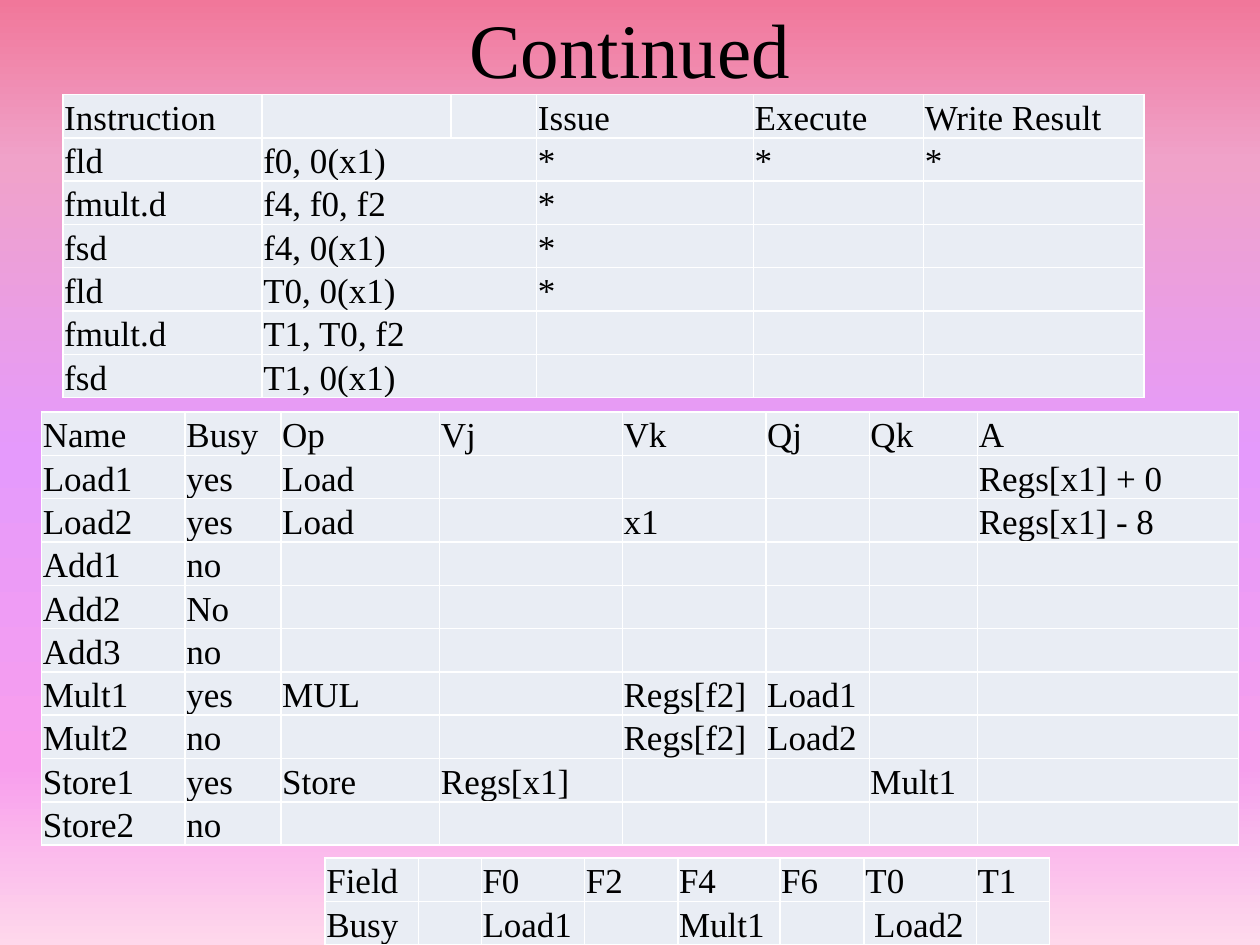
import dataclasses
import typing

import lxml.etree as etree
import pptx
import pptx.dml.color
import pptx.enum.text
import pptx.oxml.ns
import pptx.util

Inches = pptx.util.Inches
qn = pptx.oxml.ns.qn


@dataclasses.dataclass(frozen=True)
class Theme:
    font: str = "Times New Roman"
    ink: str = "000000"
    cell: str = "E9EDF4"
    rule: str = "FFFFFF"
    title: int = 44
    body: int = 20
    line: int = 1
    # Background stops: percent from the top, colour
    stops: tuple = ((0, "F1779A"), (17, "F0A2C9"), (48, "E59AFC"),
                    (81, "F89EED"), (100, "FED8EB"))


@dataclasses.dataclass(frozen=True)
class Grid:
    left: float
    top: float
    cols: tuple
    rows: tuple  # one string a row, cells parted by "|"
    merges: tuple = ()  # (row, first column, last column)


THEME = Theme()
MIN_ROW = 0.1  # rows grow to fit their text
ROW = 0.344  # share of the frame height for each row

STATUS = Grid(
    0.5, 0.75, (1.58, 1.5, 0.68, 1.72, 1.35, 1.75),
    ("Instruction|||Issue|Execute|Write Result",
     "fld|f0, 0(x1)||*|*|*",
     "fmult.d|f4, f0, f2||*||",
     "fsd|f4, 0(x1)||*||",
     "fld|T0, 0(x1)||*||",
     "fmult.d|T1, T0, f2||||",
     "fsd|T1, 0(x1)||||"),
    tuple((row, 1, 2) for row in range(1, 7)))

STATIONS = Grid(
    0.33, 3.27, (1.14, 0.76, 1.26, 1.45, 1.14, 0.82, 0.86, 2.07),
    ("Name|Busy|Op|Vj|Vk|Qj|Qk|A",
     "Load1|yes|Load|||||Regs[x1] + 0",
     "Load2|yes|Load||x1|||Regs[x1] - 8",
     "Add1|no||||||",
     "Add2|No||||||",
     "Add3|no||||||",
     "Mult1|yes|MUL||Regs[f2]|Load1||",
     "Mult2|no|||Regs[f2]|Load2||",
     "Store1|yes|Store|Regs[x1]|||Mult1|",
     "Store2|no||||||"))

FIELDS = Grid(
    2.58, 6.81, (0.74, 0.5, 0.82, 0.74, 0.81, 0.67, 0.89, 0.58),
    ("Field||F0|F2|F4|F6|T0|T1",
     "Busy||Load1||Mult1|| Load2|"))


def color(code: str) -> pptx.dml.color.RGBColor:
    return pptx.dml.color.RGBColor.from_string(code)


def write(frame: typing.Any, text: str, *, size: int = THEME.body,
          align: typing.Any = None) -> None:
    para = frame.paragraphs[0]
    para.alignment = align
    run = para.add_run()
    run.text = text
    run.font.name = THEME.font
    run.font.size = pptx.util.Pt(size)
    run.font.color.rgb = color(THEME.ink)


def paint(slide: typing.Any) -> None:
    """Fill the background with the vertical gradient."""
    fill = slide.background.fill
    fill.gradient()
    fill.gradient_angle = 270
    stops = slide.element.find(".//" + qn("a:gsLst"))
    for old in list(stops):
        stops.remove(old)
    for place, code in THEME.stops:
        stop = etree.SubElement(stops, qn("a:gs"), pos=str(place * 1000))
        etree.SubElement(stop, qn("a:srgbClr"), val=code)


def border(cell: typing.Any) -> None:
    props = cell._tc.get_or_add_tcPr()
    for side in ("a:lnL", "a:lnR", "a:lnT", "a:lnB"):
        line = etree.SubElement(props, qn(side),
                                w=str(pptx.util.Pt(THEME.line)))
        fill = etree.SubElement(line, qn("a:solidFill"))
        etree.SubElement(fill, qn("a:srgbClr"), val=THEME.rule)


def style(cell: typing.Any, text: str) -> None:
    border(cell)
    cell.fill.solid()
    cell.fill.fore_color.rgb = color(THEME.cell)
    cell.margin_left = cell.margin_right = cell.margin_top = Inches(0.01)
    cell.margin_bottom = 0
    cell.vertical_anchor = pptx.enum.text.MSO_ANCHOR.BOTTOM
    if text:
        write(cell.text_frame, text)


def draw(slide: typing.Any, grid: Grid) -> None:
    count = len(grid.rows)
    frame = slide.shapes.add_table(
        count, len(grid.cols), Inches(grid.left), Inches(grid.top),
        Inches(sum(grid.cols)), Inches(ROW * count))
    table = frame.table
    table.first_row = table.horz_banding = False
    for col, width in zip(table.columns, grid.cols):
        col.width = Inches(width)
    for r, line in enumerate(grid.rows):
        table.rows[r].height = Inches(MIN_ROW)
        for c, text in enumerate(line.split("|")):
            style(table.cell(r, c), text)
    for row, first, last in grid.merges:
        table.cell(row, first).merge(table.cell(row, last))
    frame.height = Inches(ROW * count)


def main() -> None:
    deck = pptx.Presentation()
    deck.slide_width, deck.slide_height = Inches(10), Inches(7.5)
    slide = deck.slides.add_slide(deck.slide_layouts[6])
    paint(slide)

    # Title
    box = slide.shapes.add_textbox(Inches(0.5), Inches(-0.25),
                                   Inches(9), Inches(1.25))
    box.text_frame.word_wrap = True
    box.text_frame.vertical_anchor = pptx.enum.text.MSO_ANCHOR.MIDDLE
    write(box.text_frame, "Continued", size=THEME.title,
          align=pptx.enum.text.PP_ALIGN.CENTER)

    # Instruction status, reservation stations, register fields
    for grid in (STATUS, STATIONS, FIELDS):
        draw(slide, grid)

    deck.save("out.pptx")


if __name__ == "__main__":
    main()
